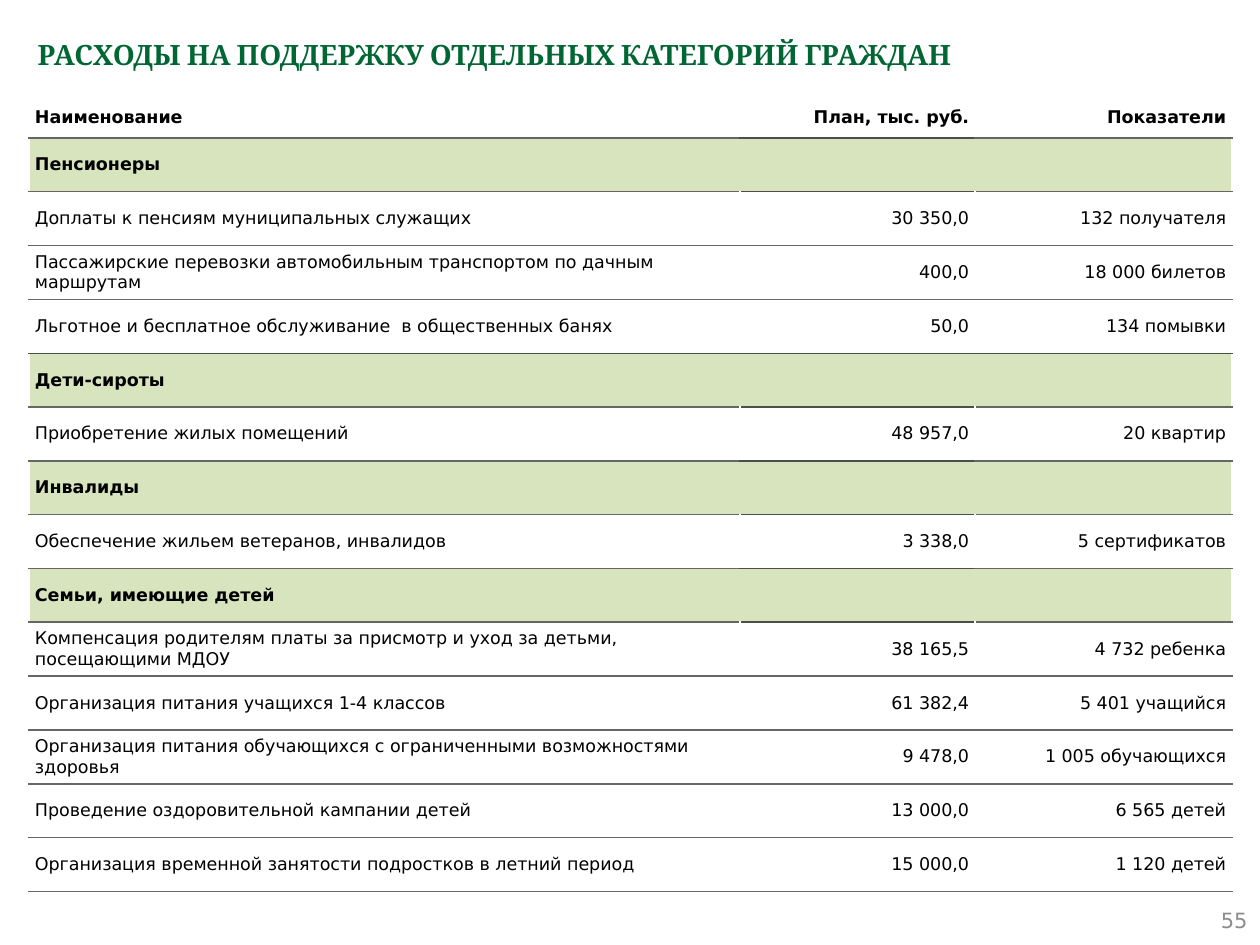
from lxml.etree import SubElement as Sub
from pptx import Presentation
from pptx.dml.color import RGBColor
from pptx.enum.text import MSO_ANCHOR as Anchor, MSO_AUTO_SIZE as Fit, PP_ALIGN as Align
from pptx.oxml.ns import qn
from pptx.util import Emu, Pt

SCALE = 914400 / 126
GREEN = RGBColor(0x00, 0x66, 0x33)
PALE = RGBColor(0xD7, 0xE4, 0xBD)
WHITE = RGBColor(0xFF, 0xFF, 0xFF)
BLACK = RGBColor(0x00, 0x00, 0x00)
GREY = RGBColor(0x66, 0x66, 0x66)
DARK = RGBColor(0x4D, 0x4D, 0x4D)
MUTED = RGBColor(0x8C, 0x8C, 0x8C)

WIDTHS = [711, 235, 257]
HEAD = 37
BODY = 753
ROWS = [
    ("Наименование", "План, тыс. руб.", "Показатели"),
    ("Пенсионеры",),
    ("Доплаты к пенсиям муниципальных служащих", "30 350,0", "132 получателя"),
    ("Пассажирские перевозки автомобильным транспортом по дачным маршрутам",
     "400,0", "18 000 билетов"),
    ("Льготное и бесплатное обслуживание  в общественных банях", "50,0", "134 помывки"),
    ("Дети-сироты",),
    ("Приобретение жилых помещений", "48 957,0", "20 квартир"),
    ("Инвалиды",),
    ("Обеспечение жильем ветеранов, инвалидов", "3 338,0", "5 сертификатов"),
    ("Семьи, имеющие детей",),
    ("Компенсация родителям платы за присмотр и уход за детьми, посещающими МДОУ",
     "38 165,5", "4 732 ребенка"),
    ("Организация питания учащихся 1-4 классов", "61 382,4", "5 401 учащийся"),
    ("Организация питания обучающихся с ограниченными возможностями здоровья",
     "9 478,0", "1 005 обучающихся"),
    ("Проведение оздоровительной кампании детей", "13 000,0", "6 565 детей"),
    ("Организация временной занятости подростков в летний период",
     "15 000,0", "1 120 детей"),
]
ORPHANS = 5


def px(n):
    return Emu(round(n * SCALE))


def group(row):
    return 0 <= row < len(ROWS) and len(ROWS[row]) == 1


def rule(row, col):
    if row == 0:
        return WHITE
    near = group(row - 1) or group(row)
    return DARK if near and (col == 1 or row == ORPHANS) else GREY


class Deck:
    font = "DejaVu Sans"

    def __init__(self):
        self.file = Presentation()
        self.file.slide_width = px(1260)
        self.file.slide_height = px(945)
        self.slide = self.file.slides.add_slide(self.file.slide_layouts[5])

    def label(self, frame, text, size, color, bold=False, align=Align.LEFT, font=None):
        frame.text = text
        frame.word_wrap = True
        para = frame.paragraphs[0]
        para.alignment = align
        for run in para.runs:
            run.font.name = font or self.font
            run.font.size = Pt(size)
            run.font.bold = bold
            run.font.color.rgb = color

    def title(self, text, x, y, w, h):
        shape = self.slide.shapes.title
        shape.left, shape.top, shape.width, shape.height = map(px, (x, y, w, h))
        frame = shape.text_frame
        self.label(frame, text, 16, GREEN, True, font="Cambria")
        frame.auto_size = Fit.NONE
        frame.vertical_anchor = Anchor.TOP
        frame.paragraphs[0].line_spacing = 1.2

    def number(self, text, x, y, w, h):
        frame = self.slide.shapes.add_textbox(*map(px, (x, y, w, h))).text_frame
        self.label(frame, text, 12, MUTED, align=Align.RIGHT)
        frame.vertical_anchor = Anchor.MIDDLE

    def border(self, cell, sides):
        props = cell._tc.get_or_add_tcPr()
        for side, color in sides.items():
            line = Sub(props, qn("a:ln" + side), w=str(Pt(1)))
            if color is None:
                Sub(line, qn("a:noFill"))
            else:
                fill = Sub(line, qn("a:solidFill"))
                Sub(fill, qn("a:srgbClr"), val=str(color))

    def cell(self, cell, row, col):
        band = group(row)
        last = len(WIDTHS) - 1
        cell.margin_left = cell.margin_right = px(6)
        cell.margin_top = cell.margin_bottom = px(6)
        cell.vertical_anchor = Anchor.MIDDLE if row else Anchor.TOP
        if col < len(ROWS[row]):
            align = Align.RIGHT if col else Align.LEFT
            self.label(cell.text_frame, ROWS[row][col], 10, BLACK, band or row == 0, align)
        self.border(cell, {
            "L": None if band and col > 0 else WHITE,
            "R": None if band and col < last else WHITE,
            "T": rule(row, col),
            "B": rule(row + 1, col),
        })
        if band:
            cell.fill.solid()
            cell.fill.fore_color.rgb = PALE
        else:
            cell.fill.background()

    def table(self, x, y):
        size = px(sum(WIDTHS)), px(HEAD + BODY)
        grid = self.slide.shapes.add_table(len(ROWS), len(WIDTHS), px(x), px(y), *size).table
        grid.horz_banding = False
        grid.first_row = False
        for col, wide in zip(grid.columns, WIDTHS):
            col.width = px(wide)
        for i, row in enumerate(grid.rows):
            row.height = px(BODY / (len(ROWS) - 1) if i else HEAD)
            for j, cell in enumerate(row.cells):
                self.cell(cell, i, j)


def main():
    deck = Deck()
    deck.title("РАСХОДЫ НА ПОДДЕРЖКУ ОТДЕЛЬНЫХ КАТЕГОРИЙ ГРАЖДАН", 25, 25, 1211, 100)
    deck.number("55", 966, 895, 294, 50)
    deck.table(29, 101)
    deck.file.save("out.pptx")


if __name__ == "__main__":
    main()
